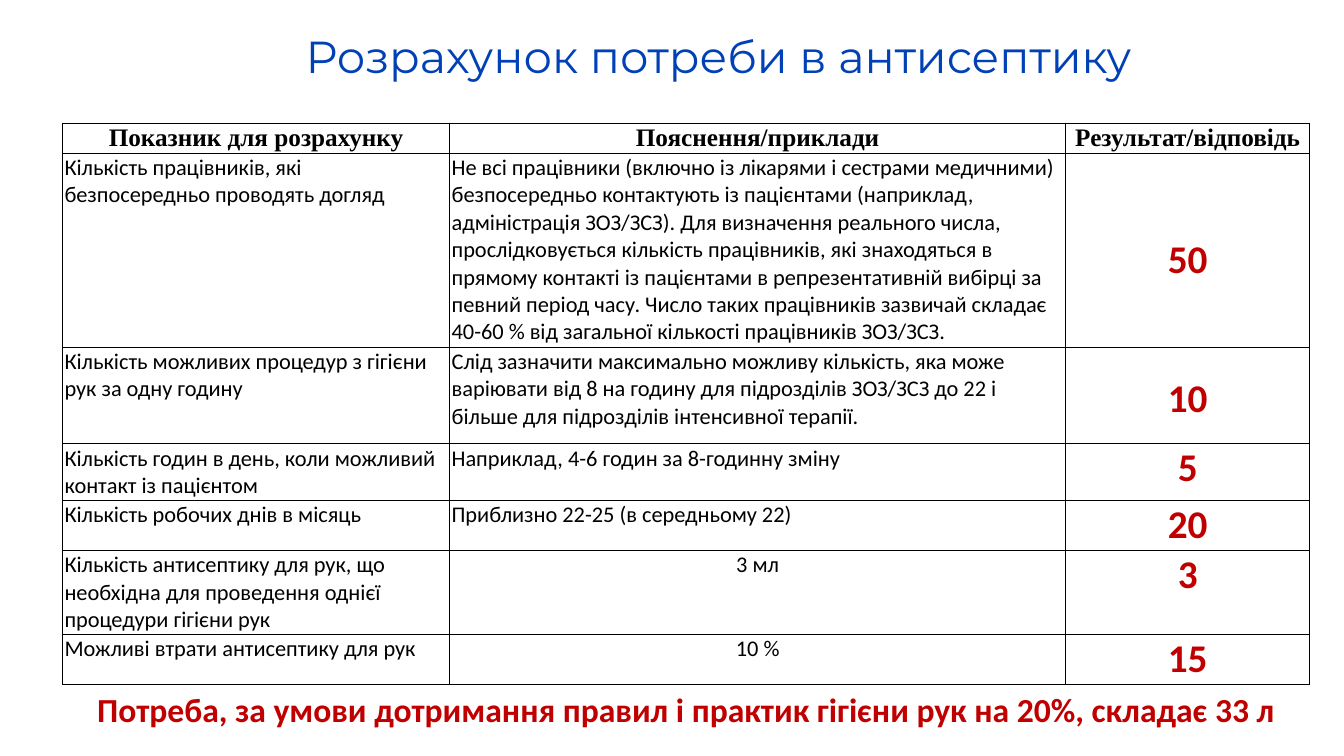
"""Build the slide that calculates the need for hand antiseptic."""
import pptx
import pptx.chart
import pptx.dml.color
import pptx.enum.text
import pptx.oxml
import pptx.oxml.ns
import pptx.util
from dataclasses import dataclass

Inches = pptx.util.Inches
Pt = pptx.util.Pt
RGB = pptx.dml.color.RGBColor
ALIGN = pptx.enum.text.PP_ALIGN
ANCHOR = pptx.enum.text.MSO_ANCHOR

TITLE = "Розрахунок потреби в антисептику"
HEADINGS = ("Показник для розрахунку", "Пояснення/приклади", "Результат/відповідь")
INDICATORS = [
    dict(name="Кількість працівників, які безпосередньо проводять догляд",
         hint="Не всі працівники (включно із лікарями і сестрами медичними) безпосередньо "
              "контактують із пацієнтами (наприклад, адміністрація ЗОЗ/ЗСЗ). Для визначення "
              "реального числа, прослідковується кількість працівників, які знаходяться в "
              "прямому контакті із пацієнтами в репрезентативній вибірці за певний період "
              "часу. Число таких працівників зазвичай складає 40-60 % від загальної "
              "кількості працівників ЗОЗ/ЗСЗ.",
         answer="50", height=1.79, lines_above=3),
    dict(name="Кількість можливих процедур з гігієни рук за одну годину",
         hint="Слід зазначити максимально можливу кількість, яка може варіювати від 8 на "
              "годину для підрозділів ЗОЗ/ЗСЗ до 22 і більше для підрозділів інтенсивної "
              "терапії.",
         answer="10", height=0.96, lines_above=1),
    dict(name="Кількість годин в день, коли можливий контакт із пацієнтом",
         hint="Наприклад, 4-6 годин за 8-годинну зміну", answer="5", height=0.53),
    dict(name="Кількість робочих днів в місяць",
         hint="Приблизно 22-25 (в середньому 22)", answer="20", height=0.46),
    dict(name="Кількість антисептику для рук, що необхідна для проведення однієї "
              "процедури гігієни рук",
         hint="3 мл", hint_align=ALIGN.CENTER, answer="3", height=0.77),
    dict(name="Можливі втрати антисептику для рук",
         hint="10 %", hint_align=ALIGN.CENTER, answer="15", height=0.46),
]
CONCLUSION = "Потреба, за умови дотримання правил і практик гігієни рук на 20%, складає 33 л"

LEFT, TOP, WIDTH, HEIGHT = 0.62, 1.22, 12.37, 5.57
COLUMN_WIDTHS = (3.84, 6.11, 2.42)
HEADING_HEIGHT = 0.3
LINE_HEIGHT = 0.27


@dataclass(frozen=True)
class Theme:
    """Colours, fonts and type sizes."""
    blue: str = "0041B6"
    red: str = "C00000"
    black: str = "000000"
    white: str = "FFFFFF"
    title_font: str = "Montserrat"
    heading_font: str = "Times New Roman"
    body_font: str = "Calibri"
    title_size: int = 32
    heading_size: int = 18
    body_size: int = 16
    answer_size: int = 28
    conclusion_size: int = 24
    border: float = 0.6


THEME = Theme()


def write(frame, text, *, size, font=THEME.body_font, color=THEME.black, bold=False,
          align=ALIGN.LEFT, after=0):
    """Put one formatted paragraph into a text frame."""
    paragraph = frame.paragraphs[0]
    paragraph.alignment = align
    paragraph.space_after = Pt(after)
    run = paragraph.add_run()
    run.text = text
    run.font.size = Pt(size)
    run.font.name = font
    run.font.bold = bold
    run.font.color.rgb = RGB.from_string(color)


def dress(cell, lines_above=0):
    """Give a cell its margins, borders and fill."""
    cell.margin_left = cell.margin_right = Inches(0.02)
    cell.margin_top = Inches(0.01 + lines_above * LINE_HEIGHT)
    cell.margin_bottom = Inches(0.01)
    properties = cell._tc.get_or_add_tcPr()
    for side in ("lnL", "lnR", "lnT", "lnB"):
        properties.append(pptx.oxml.parse_xml(
            f'<a:{side} {pptx.oxml.ns.nsdecls("a")} w="{Pt(THEME.border)}">'
            f'<a:solidFill><a:srgbClr val="{THEME.black}"/></a:solidFill></a:{side}>'))
    cell.fill.solid()
    cell.fill.fore_color.rgb = RGB.from_string(THEME.white)


def add_calculation(slide):
    """Add the table of indicators, hints and answers."""
    holder = slide.shapes.add_table(len(INDICATORS) + 1, len(HEADINGS), Inches(LEFT),
                                    Inches(TOP), Inches(WIDTH), Inches(HEIGHT))
    grid = holder.table
    for column, width in zip(grid.columns, COLUMN_WIDTHS):
        column.width = Inches(width)
    heights = [HEADING_HEIGHT] + [indicator["height"] for indicator in INDICATORS]
    for row, height in zip(grid.rows, heights):
        row.height = Inches(height)
    for column, heading in enumerate(HEADINGS):
        cell = grid.cell(0, column)
        dress(cell)
        write(cell.text_frame, heading, size=THEME.heading_size, font=THEME.heading_font,
              bold=True, align=ALIGN.CENTER)
    for row, indicator in enumerate(INDICATORS, start=1):
        name, hint, answer = (grid.cell(row, column) for column in range(len(HEADINGS)))
        dress(name)
        dress(hint)
        dress(answer, indicator.get("lines_above", 0))
        write(name.text_frame, indicator["name"], size=THEME.body_size)
        write(hint.text_frame, indicator["hint"], size=THEME.body_size,
              align=indicator.get("hint_align", ALIGN.LEFT))
        write(answer.text_frame, indicator["answer"], size=THEME.answer_size,
              color=THEME.red, bold=True, align=ALIGN.CENTER)
    holder.height = Inches(HEIGHT)


def main():
    """Build and save the slide."""
    deck = pptx.Presentation()
    deck.slide_width, deck.slide_height = Inches(13.33), Inches(7.5)
    slide = deck.slides.add_slide(deck.slide_layouts[5])

    title = slide.shapes.title
    title.left, title.top = Inches(2.28), Inches(0)
    title.width, title.height = Inches(9.7), Inches(1.11)
    title.text_frame.vertical_anchor = ANCHOR.MIDDLE
    write(title.text_frame, TITLE, size=THEME.title_size, font=THEME.title_font,
          color=THEME.blue, align=ALIGN.CENTER, after=24)

    add_calculation(slide)

    conclusion = slide.shapes.add_textbox(Inches(LEFT), Inches(TOP + HEIGHT),
                                          Inches(WIDTH), Inches(0.5)).text_frame
    conclusion.word_wrap = True
    conclusion.auto_size = pptx.enum.text.MSO_AUTO_SIZE.SHAPE_TO_FIT_TEXT
    write(conclusion, CONCLUSION, size=THEME.conclusion_size, color=THEME.red, bold=True,
          align=ALIGN.CENTER)
    deck.save("out.pptx")


if __name__ == "__main__":
    main()
